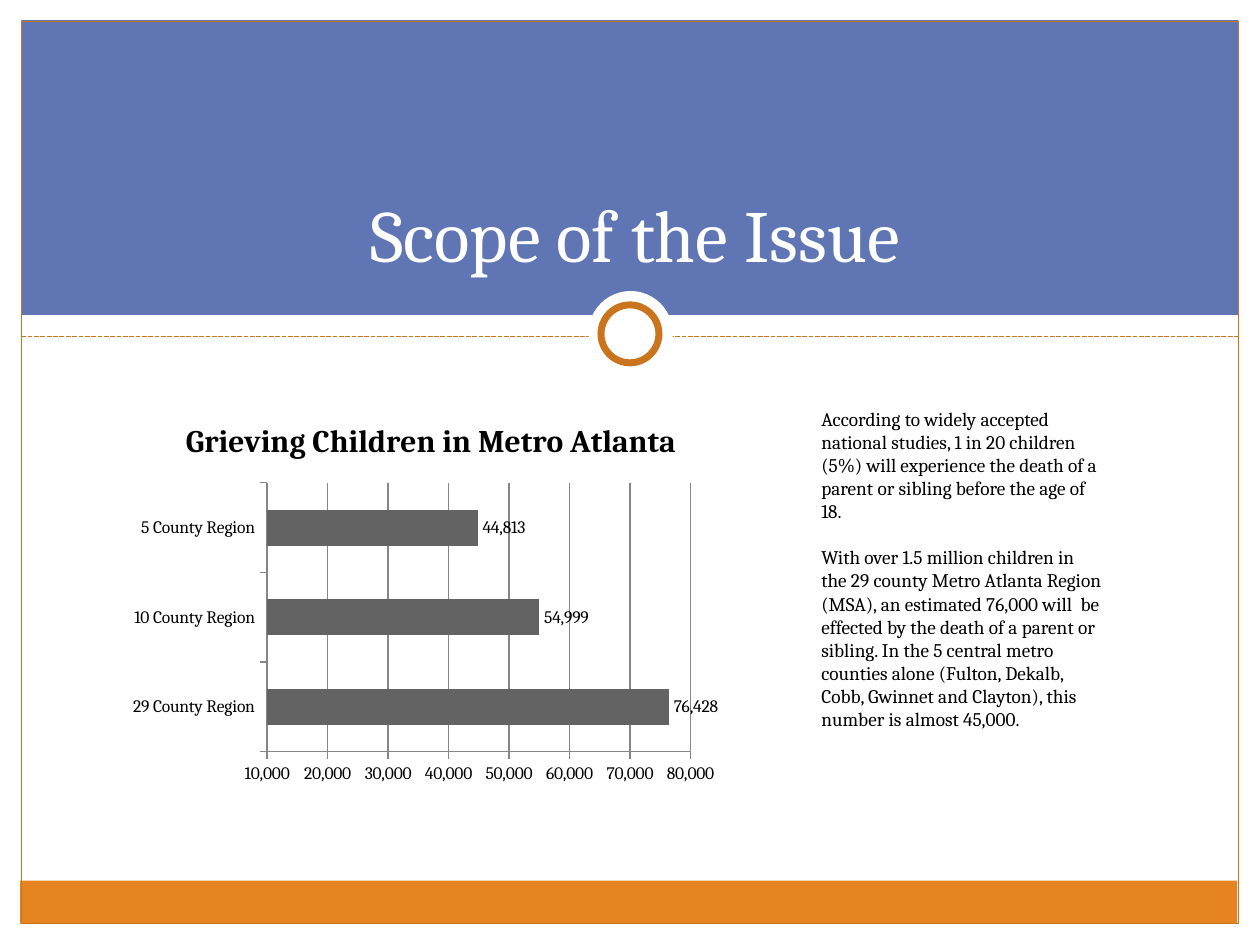
from dataclasses import dataclass
from typing import Optional

import pptx
import pptx.chart.data
import pptx.dml.color
import pptx.enum.chart
import pptx.enum.dml
import pptx.enum.shapes
import pptx.enum.text
import pptx.oxml
import pptx.oxml.ns
import pptx.util
from pptx.util import Inches, Pt

WHITE = pptx.dml.color.RGBColor(0xFF, 0xFF, 0xFF)
BLACK = pptx.dml.color.RGBColor(0x00, 0x00, 0x00)
BLUE = pptx.dml.color.RGBColor(0x60, 0x76, 0xB4)
ORANGE = pptx.dml.color.RGBColor(0xE6, 0x84, 0x22)
RUST = pptx.dml.color.RGBColor(0xCB, 0x74, 0x1E)
BAR_GRAY = pptx.dml.color.RGBColor(0x63, 0x63, 0x63)
AXIS_GRAY = pptx.dml.color.RGBColor(0x86, 0x86, 0x86)
FONT = "Cambria"
RECT = pptx.enum.shapes.MSO_SHAPE.RECTANGLE
OVAL = pptx.enum.shapes.MSO_SHAPE.OVAL


@dataclass
class Panel:
    left: float
    top: float
    width: float
    height: float
    fill: Optional[pptx.dml.color.RGBColor] = WHITE
    line_width: float = 0
    kind: pptx.enum.shapes.MSO_SHAPE = RECT


FRAME_PANELS = [
    Panel(0, 7.33, 10, 0.17),
    Panel(0, 0, 10, 0.17),
    Panel(9.83, 0, 0.17, 7.5),
    Panel(0.17, 2.5, 9.66, 0.33),
    Panel(0.17, 0.16, 9.66, 2.34, BLUE),
    Panel(0.16, 6.99, 9.66, 0.34, ORANGE),
    Panel(0.17, 0.17, 9.66, 7.16, None, 0.75),
]
RING_PANELS = [
    Panel(4.67, 2.31, 0.67, 0.67, kind=OVAL),
    Panel(4.77, 2.42, 0.46, 0.46, line_width=4, kind=OVAL),
]
CHART_TITLE = "Grieving Children in Metro Atlanta"
REGIONS = {
    "29 County Region": 76428,
    "10 County Region": 54999,
    "5 County Region": 44813,
}
FINDINGS = [
    "According to widely accepted national studies, 1 in 20 children (5%) will "
    "experience the death of a parent or sibling before the age of 18.",
    "With over 1.5 million children in the 29 county Metro Atlanta Region (MSA), "
    "an estimated 76,000 will  be effected by the death of a parent or sibling. "
    "In the 5 central metro counties alone (Fulton, Dekalb, Cobb, Gwinnet and "
    "Clayton), this number is almost 45,000.",
]


def style_font(font, size: float, color, bold: bool = False) -> None:
    font.name, font.size, font.bold = FONT, Pt(size), bold
    font.color.rgb = color


def draw_panel(slide, panel: Panel) -> None:
    shape = slide.shapes.add_shape(panel.kind, Inches(panel.left), Inches(panel.top),
                                   Inches(panel.width), Inches(panel.height))
    shape.shadow.inherit = False
    if panel.fill is None:
        shape.fill.background()
    else:
        shape.fill.solid()
        shape.fill.fore_color.rgb = panel.fill
    if panel.line_width:
        shape.line.color.rgb = RUST
        shape.line.width = Pt(panel.line_width)
    else:
        shape.line.fill.background()


def draw_divider(slide) -> None:
    divider = slide.shapes.add_connector(
        pptx.enum.shapes.MSO_CONNECTOR.STRAIGHT,
        Inches(0.17), Inches(2.67), Inches(9.83), Inches(2.67))
    divider.line.color.rgb = RUST
    divider.line.width = Pt(0.9)
    divider.line.dash_style = pptx.enum.dml.MSO_LINE.SQUARE_DOT
    divider.line._get_or_add_ln().find(
        pptx.oxml.ns.qn("a:prstDash")).set("val", "sysDash")
    divider._element.spPr.append(pptx.oxml.parse_xml(
        f"<a:effectLst {pptx.oxml.ns.nsdecls('a')}/>"))


def place_title(slide) -> None:
    title = slide.shapes.title
    title.left, title.top = Inches(0.79), Inches(0.58)
    title.width, title.height = Inches(8.5), Inches(1.67)
    title.text_frame.text = "Scope of the Issue"
    title.text_frame.vertical_anchor = pptx.enum.text.MSO_ANCHOR.BOTTOM
    heading = title.text_frame.paragraphs[0]
    heading.alignment = pptx.enum.text.PP_ALIGN.CENTER
    style_font(heading.font, 42, WHITE)
    # Bring the title in front of the blue band
    slide.shapes._spTree.append(title._element)


def fix_plot_area(chart, x: float, y: float, w: float, h: float) -> None:
    plot_area = chart._chartSpace.chart.plotArea
    for old in plot_area.findall(pptx.oxml.ns.qn("c:layout")):
        plot_area.remove(old)
    plot_area.insert(0, pptx.oxml.parse_xml(
        f"<c:layout {pptx.oxml.ns.nsdecls('c')}><c:manualLayout>"
        '<c:layoutTarget val="inner"/><c:xMode val="edge"/><c:yMode val="edge"/>'
        f'<c:x val="{x}"/><c:y val="{y}"/><c:w val="{w}"/><c:h val="{h}"/>'
        "</c:manualLayout></c:layout>"))


def draw_region_chart(slide) -> None:
    regions = pptx.chart.data.CategoryChartData(number_format="#,##0")
    regions.categories = list(REGIONS)
    regions.add_series(CHART_TITLE, list(REGIONS.values()))
    chart = slide.shapes.add_chart(
        pptx.enum.chart.XL_CHART_TYPE.BAR_CLUSTERED,
        Inches(0.92), Inches(3.17), Inches(5), Inches(3.08), regions).chart
    style_font(chart.font, 10, BLACK)
    chart.has_legend = False
    chart.has_title = True
    chart.chart_title.text_frame.text = CHART_TITLE
    style_font(chart.chart_title.text_frame.paragraphs[0].font, 18, BLACK, True)
    fix_plot_area(chart, 0.24, 0.215, 0.672, 0.693)

    # Bars and their values
    plot = chart.plots[0]
    plot.gap_width = 150
    plot.vary_by_categories = False
    bars = plot.series[0].format.fill
    bars.solid()
    bars.fore_color.rgb = BAR_GRAY
    plot.has_data_labels = True
    labels = plot.data_labels
    labels.show_value = True
    labels.number_format, labels.number_format_is_linked = "#,##0", False
    labels.position = pptx.enum.chart.XL_LABEL_POSITION.OUTSIDE_END
    style_font(labels.font, 10, BLACK)

    # Axes and gridlines
    values = chart.value_axis
    values.minimum_scale, values.maximum_scale = 10000, 80000
    values.major_unit = 10000
    values.has_major_gridlines = True
    values.tick_labels.number_format = "#,##0"
    values.tick_labels.number_format_is_linked = False
    for axis in (chart.category_axis, values):
        axis.major_tick_mark = pptx.enum.chart.XL_TICK_MARK.OUTSIDE
        style_font(axis.tick_labels.font, 10, BLACK)
    for rule in (chart.category_axis, values, values.major_gridlines):
        rule.format.line.color.rgb = AXIS_GRAY
        rule.format.line.width = Pt(0.75)


def draw_findings(slide) -> None:
    findings = slide.shapes.add_textbox(
        Inches(6.42), Inches(3), Inches(2.44), Inches(3.03))
    findings.fill.solid()
    findings.fill.fore_color.rgb = WHITE
    frame = findings.text_frame
    frame.word_wrap = True
    frame.margin_top = Inches(0.23)
    frame.text = "\n".join(FINDINGS)
    for paragraph in frame.paragraphs:
        style_font(paragraph.font, 11, BLACK)
    frame.paragraphs[-1].space_before = Pt(13.2)


def main() -> None:
    deck = pptx.Presentation()
    deck.slide_width, deck.slide_height = Inches(10), Inches(7.5)
    slide = deck.slides.add_slide(deck.slide_layouts.get_by_name("Title Only"))
    for panel in FRAME_PANELS:
        draw_panel(slide, panel)
    draw_divider(slide)
    for panel in RING_PANELS:
        draw_panel(slide, panel)
    place_title(slide)
    draw_region_chart(slide)
    draw_findings(slide)
    deck.save("out.pptx")


if __name__ == "__main__":
    main()
